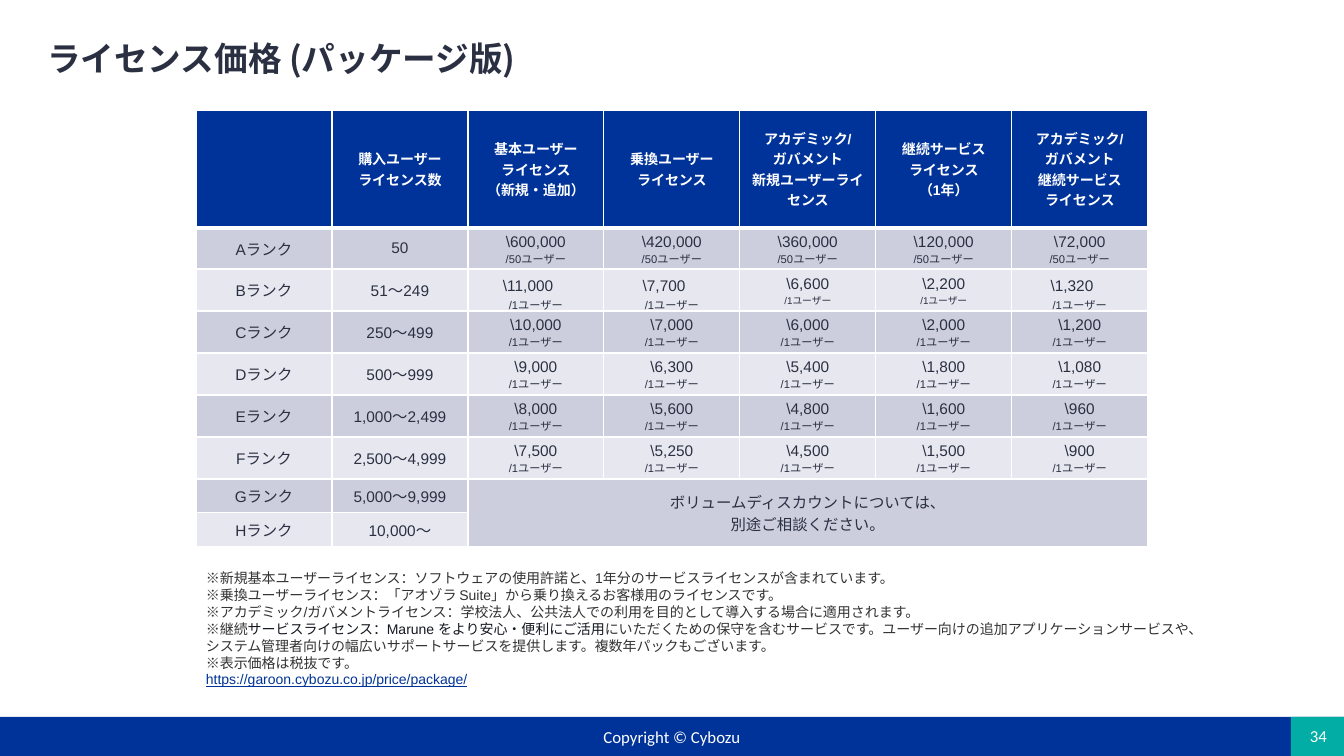
from pptx import Presentation
from pptx.dml.color import RGBColor
from pptx.enum.shapes import MSO_SHAPE
from pptx.enum.text import MSO_ANCHOR, PP_ALIGN
from pptx.oxml.ns import qn
from pptx.util import Emu, Pt
from lxml import etree

RECT = MSO_SHAPE.RECTANGLE
MIDDLE, TOP = MSO_ANCHOR.MIDDLE, MSO_ANCHOR.TOP
LEFT, CENTER = PP_ALIGN.LEFT, PP_ALIGN.CENTER
EMU_PER_PX = 12192000 / 1344
JAPANESE = "Noto Sans CJK JP"
COLORS = {
    "white": "FFFFFF", "blue": "003399", "teal": "01ADA4", "ink": "2A3042",
    "note": "333333", "strong": "151821", "link": "003398",
    "band_dark": "CCCEDE", "band_light": "E7E8EF",
}

HEADINGS = [
    [],
    ["購入ユーザー", "ライセンス数"],
    ["基本ユーザー", "ライセンス", "（新規・追加）"],
    ["乗換ユーザー", "ライセンス"],
    ["アカデミック/", "ガバメント", "新規ユーザーライセンス"],
    ["継続サービス", "ライセンス", "（1年）"],
    ["アカデミック/", "ガバメント", "継続サービス", "ライセンス"],
]
RANKS = [
    ("A", "50", ["600,000", "420,000", "360,000", "120,000", "72,000"]),
    ("B", "51～249", ["11,000　", "7,700　", "6,600", "2,200", "1,320　"]),
    ("C", "250～499", ["10,000", "7,000", "6,000", "2,000", "1,200"]),
    ("D", "500～999", ["9,000", "6,300", "5,400", "1,800", "1,080"]),
    ("E", "1,000～2,499", ["8,000", "5,600", "4,800", "1,600", "960"]),
    ("F", "2,500～4,999", ["7,500", "5,250", "4,500", "1,500", "900"]),
    ("G", "5,000～9,999", []),
    ("H", "10,000～", []),
]
DISCOUNT = ["ボリュームディスカウントについては、", "別途ご相談ください。"]
ROW_HEIGHTS = [118, 41] + [42] * 5 + [34] * 2
COLUMN_WIDTH = 136
NOTES = [
    [("※新規基本ユーザーライセンス：ソフトウェアの使用許諾と、1年分のサービスライセンスが含まれています。", "note")],
    [("※乗換ユーザーライセンス：「アオゾラ Suite」から乗り換えるお客様用のライセンスです。", "note")],
    [("※アカデミック/ガバメントライセンス：学校法人、公共法人での利用を目的として導入する場合に適用されます。", "note")],
    [("※継続", "note"),
     ("サービスライセンス：Marune をより安心・便利にご活用", "strong"),
     ("にいただくための保守を含むサービスです。ユーザー向けの追加アプリケーションサービスや、"
      "システム管理者向けの幅広いサポートサービスを提供します。複数年パックもございます。", "note")],
    [("※表示価格は税抜です。", "note")],
    [("https://garoon.cybozu.co.jp/price/package/", "link")],
]


def px(length):
    return Emu(round(length * EMU_PER_PX))


def rgb(color):
    return RGBColor.from_string(COLORS[color])


class PriceSlide:
    def __init__(self, deck):
        self.page = deck.slides.add_slide(deck.slide_layouts[5])

    def add_runs(self, frame, paragraphs, align=LEFT, font="Arial", bold=False):
        for index, spans in enumerate(paragraphs):
            para = frame.paragraphs[0] if index == 0 else frame.add_paragraph()
            para.alignment = align
            for text, size, color in spans:
                span = para.add_run()
                span.text = text
                span.font.name = font
                span.font.size = Pt(size)
                span.font.bold = bold
                span.font.color.rgb = rgb(color)
                if color == "link":
                    span.font.underline = True
                east_asian = etree.SubElement(span.font._element, qn("a:ea"))
                east_asian.set("typeface", JAPANESE)

    def title(self, text, left, top, width, height):
        box = self.page.shapes.title
        box.left, box.top, box.width, box.height = map(px, (left, top, width, height))
        box.text_frame.vertical_anchor = MIDDLE
        self.add_runs(box.text_frame, [[(text, 24, "ink")]], font=JAPANESE, bold=True)
        box.text_frame.paragraphs[0].line_spacing = 0.9

    def bar(self, color, *place):
        shape = self.page.shapes.add_shape(RECT, *map(px, place))
        shape.shadow.inherit = False
        shape.fill.solid()
        shape.fill.fore_color.rgb = rgb(color)
        shape.line.fill.background()

    def text(self, paragraphs, *place, anchor=TOP, **style):
        box = self.page.shapes.add_textbox(*map(px, place))
        box.text_frame.word_wrap = True
        box.text_frame.vertical_anchor = anchor
        self.add_runs(box.text_frame, paragraphs, **style)

    def table(self, left, top, row_heights, columns, column_width):
        frame = self.page.shapes.add_table(
            len(row_heights), columns, px(left), px(top),
            px(columns * column_width), px(sum(row_heights)))
        for row, height in zip(frame.table.rows, row_heights):
            row.height = px(height)
        for column in frame.table.columns:
            column.width = px(column_width)
        return frame.table

    def cell(self, cell, paragraphs, fill, bold=False, bottom=5, borders=(1, 1, 1, 1)):
        properties = cell._tc.get_or_add_tcPr()
        for side, points in zip("LRTB", borders):
            line = etree.SubElement(properties, qn(f"a:ln{side}"), w=str(Pt(points)))
            solid = etree.SubElement(line, qn("a:solidFill"))
            etree.SubElement(solid, qn("a:srgbClr"), val=COLORS["white"])
        cell.fill.solid()
        cell.fill.fore_color.rgb = rgb(fill)
        cell.vertical_anchor = MIDDLE
        cell.margin_left = cell.margin_right = px(10)
        cell.margin_top, cell.margin_bottom = px(5), px(bottom)
        self.add_runs(cell.text_frame, paragraphs, align=CENTER, bold=bold)


def add_prices(slide):
    table = slide.table(196, 110, ROW_HEIGHTS, len(HEADINGS), COLUMN_WIDTH)
    table.cell(7, 2).merge(table.cell(8, 6))
    for column, lines in enumerate(HEADINGS):
        slide.cell(table.cell(0, column), [[(line, 10, "white")] for line in lines],
                   "blue", bold=True, borders=(1, 1, 1, 3))
    for row, (rank, users, prices) in enumerate(RANKS, start=1):
        fill = "band_dark" if row % 2 else "band_light"
        borders = (1, 1, 3 if row == 1 else 1, 1)
        for column, text in enumerate([f"{rank}ランク", users]):
            slide.cell(table.cell(row, column), [[(text, 11, "ink")]], fill, borders=borders)
        unit = "/50ユーザー" if rank == "A" else "/1ユーザー"
        for column, price in enumerate(prices, start=2):
            padded = price.endswith("　")
            unit_size = 7 if rank == "B" and not padded else 8
            slide.cell(table.cell(row, column),
                       [[("\\" + price, 11, "ink")], [(unit, unit_size, "ink")]],
                       fill, bottom=0 if padded else 2, borders=borders)
    for row in (7, 8):
        for column in range(2, 7):
            lines = DISCOUNT if (row, column) == (7, 2) else []
            slide.cell(table.cell(row, column),
                       [[(line, 11, "ink")] for line in lines], "band_dark")


def main():
    deck = Presentation()
    deck.slide_width, deck.slide_height = px(1344), px(756)
    slide = PriceSlide(deck)
    slide.bar("blue", 0, 717, 1344, 39)
    slide.bar("teal", 1291, 717, 53, 39)
    footer = {"anchor": MIDDLE, "align": CENTER, "font": "Calibri"}
    slide.text([[("Copyright © Cybozu", 12, "white")]], 445, 723, 454, 27, **footer)
    slide.text([[("34", 12, "white")]], 1289, 720, 59, 32, **footer)
    slide.title("ライセンス価格 (パッケージ版)", 37, 29, 1210, 64)
    slide.text([[(text, 10, color) for text, color in spans] for spans in NOTES],
               196, 565, 1018, 129)
    add_prices(slide)
    deck.save("out.pptx")


if __name__ == "__main__":
    main()
